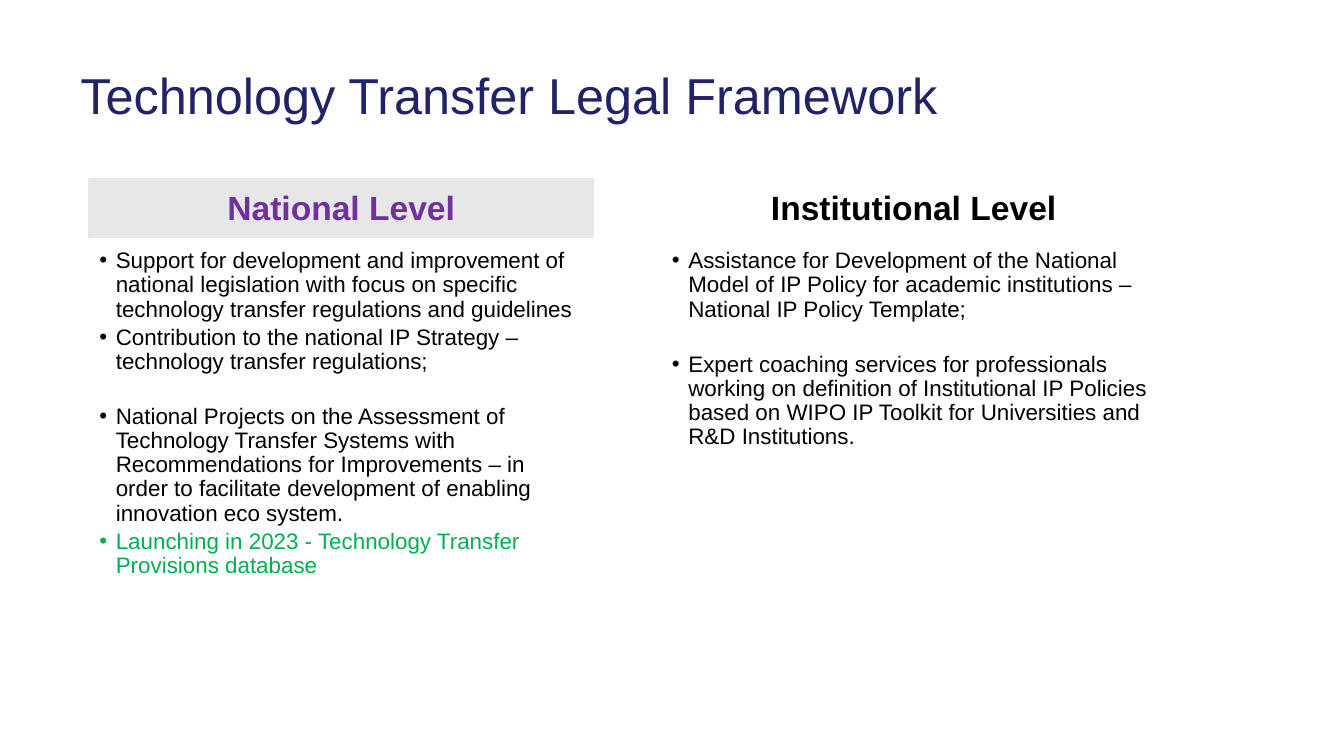
from pptx import Presentation
from pptx.dml.color import RGBColor
from pptx.enum.shapes import MSO_SHAPE
from pptx.enum.text import MSO_ANCHOR, PP_ALIGN
from pptx.oxml.ns import qn
from pptx.util import Cm, Pt
from lxml.etree import SubElement

# Content: each bullet is (text, colour, space before in points)
TITLE = "Technology Transfer Legal Framework"
COLUMNS = [
    {
        "heading": "National Level", "color": "purple", "fill": "grey",
        "bullets": [
            ("Support for development and improvement of national legislation with focus on "
             "specific technology transfer regulations and guidelines", "black", 0),
            ("Contribution to the national IP Strategy – technology transfer regulations;", "black", 0),
            ("National Projects on the Assessment of Technology Transfer Systems with "
             "Recommendations for Improvements – in order to facilitate development of "
             "enabling innovation eco system.", "black", 14.5),
            ("Launching in 2023 - Technology Transfer Provisions database", "green", 0),
        ],
    },
    {
        "heading": "Institutional Level", "color": "black", "fill": "white",
        "bullets": [
            ("Assistance for Development of the National Model of IP Policy for academic "
             "institutions – National IP Policy Template;", "black", 0),
            ("Expert coaching services for professionals working on definition of Institutional "
             "IP Policies based on WIPO IP Toolkit for Universities and R&D Institutions.",
             "black", 14.5),
        ],
    },
]
COLORS = {"navy": "222267", "purple": "7030A0", "green": "00B050",
          "black": "000000", "grey": "E7E7E7", "white": "FFFFFF"}

# Layout in centimetres
LEFT, TOP, WIDTH, PITCH = 1.7, 3.4, 9.5, 10.82
HEADING_HEIGHT, BODY_HEIGHT = 1.13, 7.5
HEADING_INSETS = (0.36, 0.2, 0.36, 0.2)
BODY_INSETS = (0.18, 0.18, 0.23, 0.25)
INDENT = 0.31


def rgb(name):
    return RGBColor.from_string(COLORS[name])


def write(para, text, *, size, color, bold=False, align=PP_ALIGN.LEFT,
          spacing=0.9, before=0, after=0, bullet=False):
    para.alignment = align
    para.line_spacing = spacing
    para.space_before = Pt(before)
    para.space_after = Pt(after)
    if bullet:
        props = para._p.get_or_add_pPr()
        props.set("marL", str(Cm(INDENT)))
        props.set("indent", str(-Cm(INDENT)))
        SubElement(props, qn("a:buFont")).set("typeface", "Arial")
        SubElement(props, qn("a:buChar")).set("char", "•")
    span = para.add_run()
    span.text = text
    span.font.name = "Arial"
    span.font.size = Pt(size)
    span.font.bold = bold
    span.font.color.rgb = rgb(color)


def add_panel(page, left, top, height, fill, insets, anchor):
    panel = page.shapes.add_shape(MSO_SHAPE.RECTANGLE, Cm(left), Cm(top), Cm(WIDTH), Cm(height))
    panel.shadow.inherit = False
    panel.fill.solid()
    panel.fill.fore_color.rgb = rgb(fill)
    panel.line.color.rgb = rgb(fill)
    panel.line.width = Pt(2)
    frame = panel.text_frame
    frame.word_wrap = True
    frame.vertical_anchor = anchor
    (frame.margin_left, frame.margin_top,
     frame.margin_right, frame.margin_bottom) = map(Cm, insets)
    return frame


deck = Presentation()
deck.slide_width, deck.slide_height = Cm(25.4), Cm(14.28)
page = deck.slides.add_slide(deck.slide_layouts[6])

# Title
box = page.shapes.add_textbox(Cm(1.27), Cm(0.58), Cm(22.86), Cm(2.39))
box.text_frame.word_wrap = True
box.text_frame.vertical_anchor = MSO_ANCHOR.MIDDLE
write(box.text_frame.paragraphs[0], TITLE, size=27, color="navy", spacing=1.0)

# Columns: a heading bar above a bulleted panel
for index, column in enumerate(COLUMNS):
    left = LEFT + index * PITCH
    heading = add_panel(page, left, TOP, HEADING_HEIGHT, column["fill"],
                        HEADING_INSETS, MSO_ANCHOR.MIDDLE)
    write(heading.paragraphs[0], column["heading"], size=18, color=column["color"],
          bold=True, align=PP_ALIGN.CENTER)

    body = add_panel(page, left, TOP + HEADING_HEIGHT, BODY_HEIGHT, "white",
                     BODY_INSETS, MSO_ANCHOR.TOP)
    for number, (text, color, before) in enumerate(column["bullets"]):
        para = body.add_paragraph() if number else body.paragraphs[0]
        write(para, text, size=12, color=color, before=before, after=2, bullet=True)

deck.save("out.pptx")
